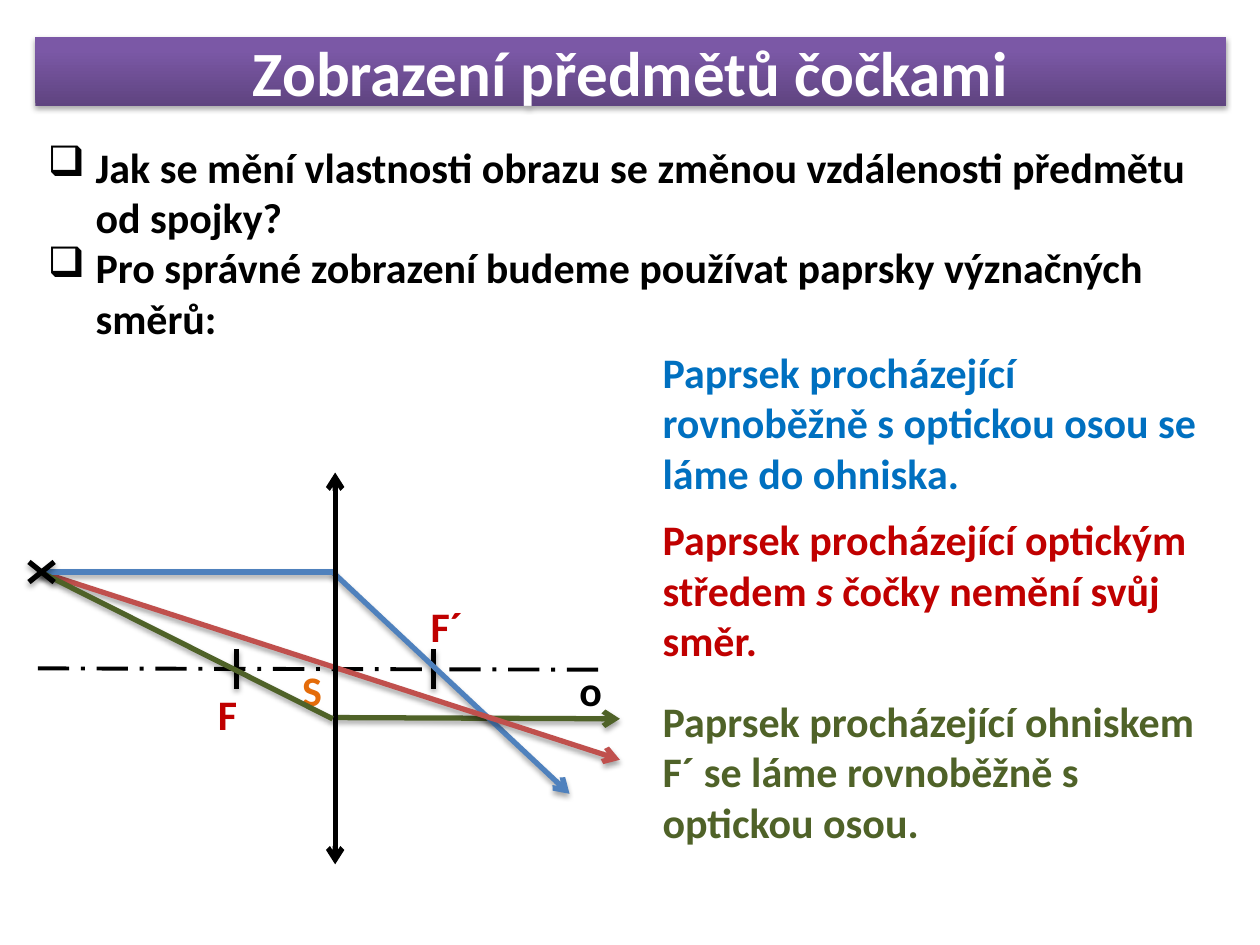
from lxml import etree
from pptx import Presentation
from pptx.dml.color import RGBColor
from pptx.enum.dml import MSO_LINE
from pptx.enum.shapes import MSO_CONNECTOR
from pptx.enum.text import MSO_ANCHOR, PP_ALIGN
from pptx.oxml import parse_xml
from pptx.oxml.ns import nsdecls, qn
from pptx.util import Inches, Pt

STRAIGHT = MSO_CONNECTOR.STRAIGHT
LONG_DASH_DOT = MSO_LINE.LONG_DASH_DOT
MIDDLE = MSO_ANCHOR.MIDDLE
CENTER = PP_ALIGN.CENTER
FONT = "Calibri"
COLORS = {
    "white": "FFFFFF", "black": "000000", "red": "C00000", "orange": "E46C0A",
    "blue": "0070C0", "green": "4F6228", "blue_ray": "4F81BD", "red_ray": "C0504D",
}
TITLE_STOPS = [(0, "5F4480"), (80, "7B58A6"), (100, "7C57A8")]


def rgb(name):
    return RGBColor.from_string(COLORS[name])


def set_effects(sp, shadow):
    """Give a shape the soft drop shadow, or an empty effect list."""
    effects = etree.SubElement(sp._element.spPr, qn("a:effectLst"))
    if shadow:
        effects.append(parse_xml(
            f'<a:outerShdw {nsdecls("a")} blurRad="{Pt(3.1)}" dist="{Pt(1.8)}" '
            'dir="5400000" rotWithShape="0"><a:srgbClr val="000000">'
            '<a:alpha val="35000"/></a:srgbClr></a:outerShdw>'))


def write(p, text, color="black", size=24, italic=None):
    """Add a bold run to a paragraph."""
    r = p.add_run()
    r.text = text
    r.font.name, r.font.size, r.font.bold = FONT, Pt(size), True
    r.font.italic = italic
    r.font.color.rgb = rgb(color)


def add_text_box(slide, left, top, width, height):
    sp = slide.shapes.add_textbox(Inches(left), Inches(top), Inches(width), Inches(height))
    sp.text_frame.word_wrap = True
    return sp


def add_line(slide, start, end, color="black", width=3, head=False, tail=False,
             dash=None, shadow=True):
    points = [Inches(v) for v in (*start, *end)]
    line = slide.shapes.add_connector(STRAIGHT, *points)
    line.line.color.rgb = rgb(color)
    line.line.width = Pt(width)
    if dash:
        line.line.dash_style = dash
    for tag, wanted in (("a:headEnd", head), ("a:tailEnd", tail)):
        if wanted:
            etree.SubElement(line.line._get_or_add_ln(), qn(tag), type="arrow")
    set_effects(line, shadow)


def add_title(slide, left, top, width, height):
    sp = slide.shapes.title
    sp.left, sp.top, sp.width, sp.height = map(Inches, (left, top, width, height))
    stops = "".join(f'<a:gs pos="{pos * 1000}"><a:srgbClr val="{color}"/></a:gs>'
                    for pos, color in TITLE_STOPS)
    sp._element.spPr.append(parse_xml(
        f'<a:gradFill {nsdecls("a")} rotWithShape="1"><a:gsLst>{stops}</a:gsLst>'
        '<a:lin ang="16200000" scaled="0"/></a:gradFill>'))
    set_effects(sp, shadow=True)
    tf = sp.text_frame
    tf.vertical_anchor = MIDDLE
    p = tf.paragraphs[0]
    p.alignment = CENTER
    write(p, "Zobrazení předmětů čočkami", color="white", size=36)


def add_questions(slide, left, top, width, height):
    tf = add_text_box(slide, left, top, width, height).text_frame
    questions = [
        "Jak se mění vlastnosti obrazu se změnou vzdálenosti předmětu od spojky?",
        "Pro správné zobrazení budeme používat paprsky význačných směrů:",
    ]
    for i, text in enumerate(questions):
        p = tf.add_paragraph() if i else tf.paragraphs[0]
        pPr = p._p.get_or_add_pPr()
        pPr.set("marL", str(Inches(0.38)))
        pPr.set("indent", str(-Inches(0.38)))
        etree.SubElement(pPr, qn("a:buChar"), char="❑")
        write(p, text)


def add_lens_diagram(slide, left, top, width, height):
    lens_x, axis_y = left + 2.36, top + height / 2
    focus, object_y = 0.78, top + 0.79
    right = left + width
    source, ray_y = (left + 0.02, object_y), axis_y + 0.4

    def label(text, x, y, color):
        sp = add_text_box(slide, x, y, 0.51, 0.5)
        write(sp.text_frame.paragraphs[0], text, color)
        return sp

    def focus_mark(x):
        add_line(slide, (x, axis_y - 0.15), (x, axis_y + 0.16))

    # Optical centre and axis
    centre = label("S", lens_x - 0.36, axis_y - 0.08, "orange")
    centre.fill.solid()
    centre.fill.fore_color.rgb = rgb("white")
    add_line(slide, (left, axis_y), (left + 4.5, axis_y + 0.01), width=2.25,
             dash=LONG_DASH_DOT, shadow=False)
    focus_mark(lens_x + focus)
    label("F", lens_x - focus - 0.25, axis_y + 0.11, "red")

    # Rays, lens and second focus
    add_line(slide, (lens_x - 0.02, ray_y - 0.01), (right, ray_y), "green", tail=True)
    add_line(slide, (lens_x - 0.02, object_y), (left + 4.22, top + 2.55),
             "blue_ray", tail=True)
    add_line(slide, source, (right, top + 2.28), "red_ray", tail=True)
    label("o", left + 4.2, axis_y - 0.08, "black")
    add_line(slide, (left, object_y), (lens_x, object_y), "blue_ray")
    add_line(slide, (lens_x, top + height), (lens_x, top), head=True, tail=True,
             shadow=False)
    label("F´", lens_x + focus - 0.12, axis_y - 0.59, "red")
    focus_mark(lens_x - focus)
    add_line(slide, source, (lens_x - 0.02, ray_y), "green")

    # Cross at the object point
    for dy in (0.08, -0.08):
        add_line(slide, (left + 0.13, object_y - dy), (left - 0.07, object_y + dy))


def add_ray_rules(slide, left, top, width):
    rules = [
        (0, "blue", [("Paprsek procházející rovnoběžně s optickou osou se láme do ohniska.",
                      None)]),
        (1.33, "red", [("Paprsek procházející optickým středem ", None), ("s ", True),
                       ("čočky nemění svůj směr.", None)]),
        (2.77, "green", [("Paprsek procházející ohniskem F´ se láme rovnoběžně s "
                          "optickou osou.", None)]),
    ]
    for offset, color, parts in rules:
        sp = add_text_box(slide, left, top + offset, width, 1.31)
        for text, italic in parts:
            write(sp.text_frame.paragraphs[0], text, color, italic=italic)


def main():
    prs = Presentation()
    prs.slide_width, prs.slide_height = Inches(10), Inches(7.5)
    slide = prs.slides.add_slide(prs.slide_layouts[5])
    add_title(slide, 0.28, 0.29, 9.45, 0.55)
    add_questions(slide, 0.28, 1.07, 9.45, 1.72)
    add_lens_diagram(slide, 0.3, 3.75, 4.62, 3.11)
    add_ray_rules(slide, 5.16, 2.7, 4.55)
    prs.save("out.pptx")


if __name__ == "__main__":
    main()
